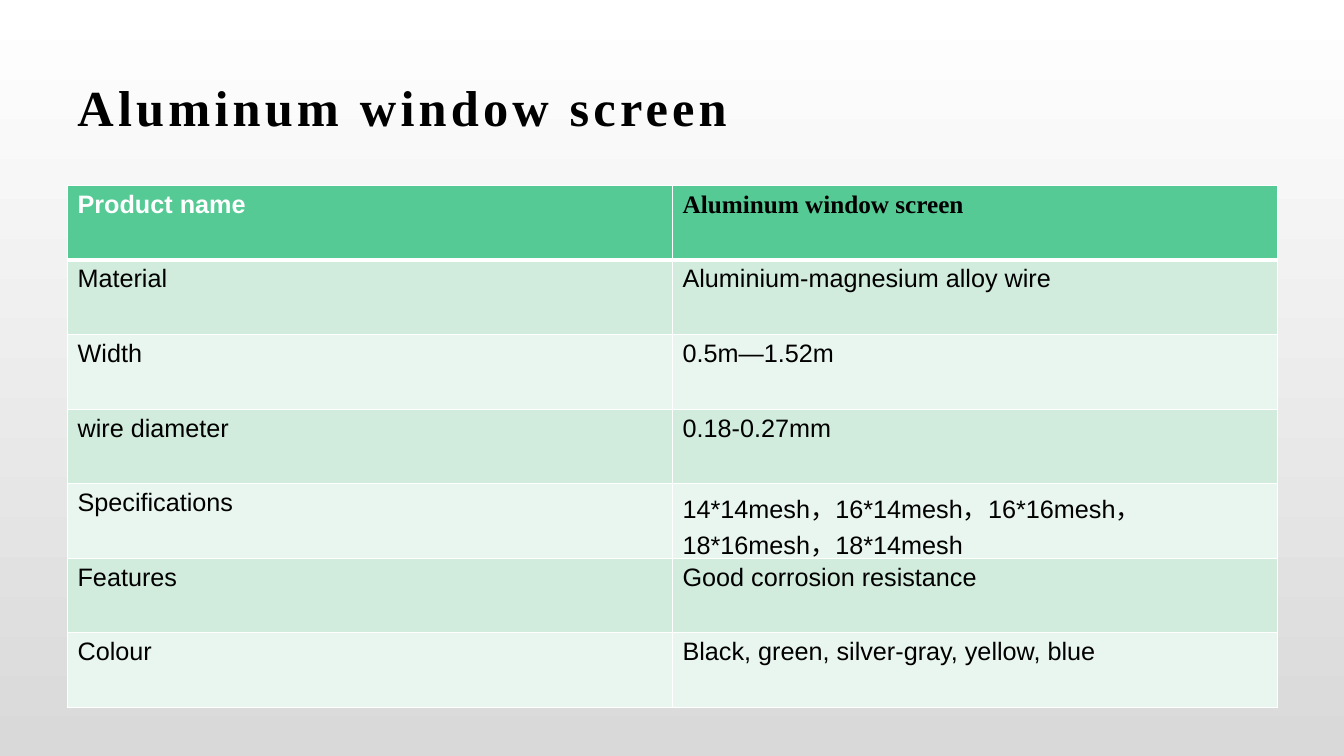
from lxml import etree
from pptx import Presentation
from pptx import util as u
from pptx.dml.color import RGBColor
from pptx.enum import text
from pptx.oxml import ns

HUES = {
    "white": "FFFFFF",
    "gray": "D9D9D9",
    "black": "000000",
    "head": "56CA95",
    "dark": "D1ECDD",
    "light": "E9F6EF",
}
TITLE = "Aluminum window screen"
ROWS = [
    ("Product name", TITLE),
    ("Material", "Aluminium-magnesium alloy wire"),
    ("Width", "0.5m—1.52m"),
    ("wire diameter", "0.18-0.27mm"),
    ("Specifications", "14*14mesh，16*14mesh，16*16mesh，18*16mesh，18*14mesh"),
    ("Features", "Good corrosion resistance"),
    ("Colour", "Black, green, silver-gray, yellow, blue"),
]


def rgb(name):
    return RGBColor.from_string(HUES[name])


def style(para, size, face, hue, bold):
    for run in para.runs:
        font = run.font
        font.size = u.Pt(size)
        font.name = face
        font.bold = bold
        font.color.rgb = rgb(hue)


def paint_back(slide):
    fill = slide.background.fill
    fill.gradient()
    fill.gradient_angle = 270
    for stop, hue, spot in zip(fill.gradient_stops, ("white", "gray"), (0, 1)):
        stop.color.rgb = rgb(hue)
        stop.position = spot


def add_title(slide):
    box = slide.shapes.add_textbox(
        u.Inches(0.67), u.Inches(0.67), u.Inches(12), u.Inches(0.77))
    frame = box.text_frame
    frame.word_wrap = True
    frame.vertical_anchor = text.MSO_ANCHOR.MIDDLE
    frame.text = TITLE
    para = frame.paragraphs[0]
    style(para, 36, "Times New Roman", "black", True)
    para.runs[0].font._element.set("spc", "300")


def add_edges(cell, top, base):
    props = cell._tc.get_or_add_tcPr()
    for spot, (side, width) in enumerate(
            (("L", 1), ("R", 1), ("T", top), ("B", base))):
        line = etree.Element(ns.qn(f"a:ln{side}"), w=str(u.Pt(width)))
        fill = etree.SubElement(line, ns.qn("a:solidFill"))
        etree.SubElement(fill, ns.qn("a:srgbClr"), val=HUES["white"])
        props.insert(spot, line)


def fill_cell(cell, words, row, col):
    head = row == 0
    cell.text = words
    cell.fill.solid()
    cell.fill.fore_color.rgb = rgb(
        "head" if head else "dark" if row % 2 else "light")
    face = "Times New Roman" if head and col else "Arial"
    hue = "white" if head and not col else "black"
    style(cell.text_frame.paragraphs[0], 18, face, hue, head)
    add_edges(cell, 3 if row == 1 else 1, 3 if head else 1)


def add_specs(slide):
    high = u.Inches(0.74)
    table = slide.shapes.add_table(
        len(ROWS), 2, u.Inches(0.67), u.Inches(1.84),
        u.Inches(12), high * len(ROWS)).table
    for row, pair in enumerate(ROWS):
        table.rows[row].height = high
        for col, words in enumerate(pair):
            fill_cell(table.cell(row, col), words, row, col)


def main():
    deck = Presentation()
    deck.slide_width = u.Inches(13.33)
    deck.slide_height = u.Inches(7.5)
    slide = deck.slides.add_slide(deck.slide_layouts[6])
    paint_back(slide)
    add_title(slide)
    add_specs(slide)
    deck.save("out.pptx")


if __name__ == "__main__":
    main()
